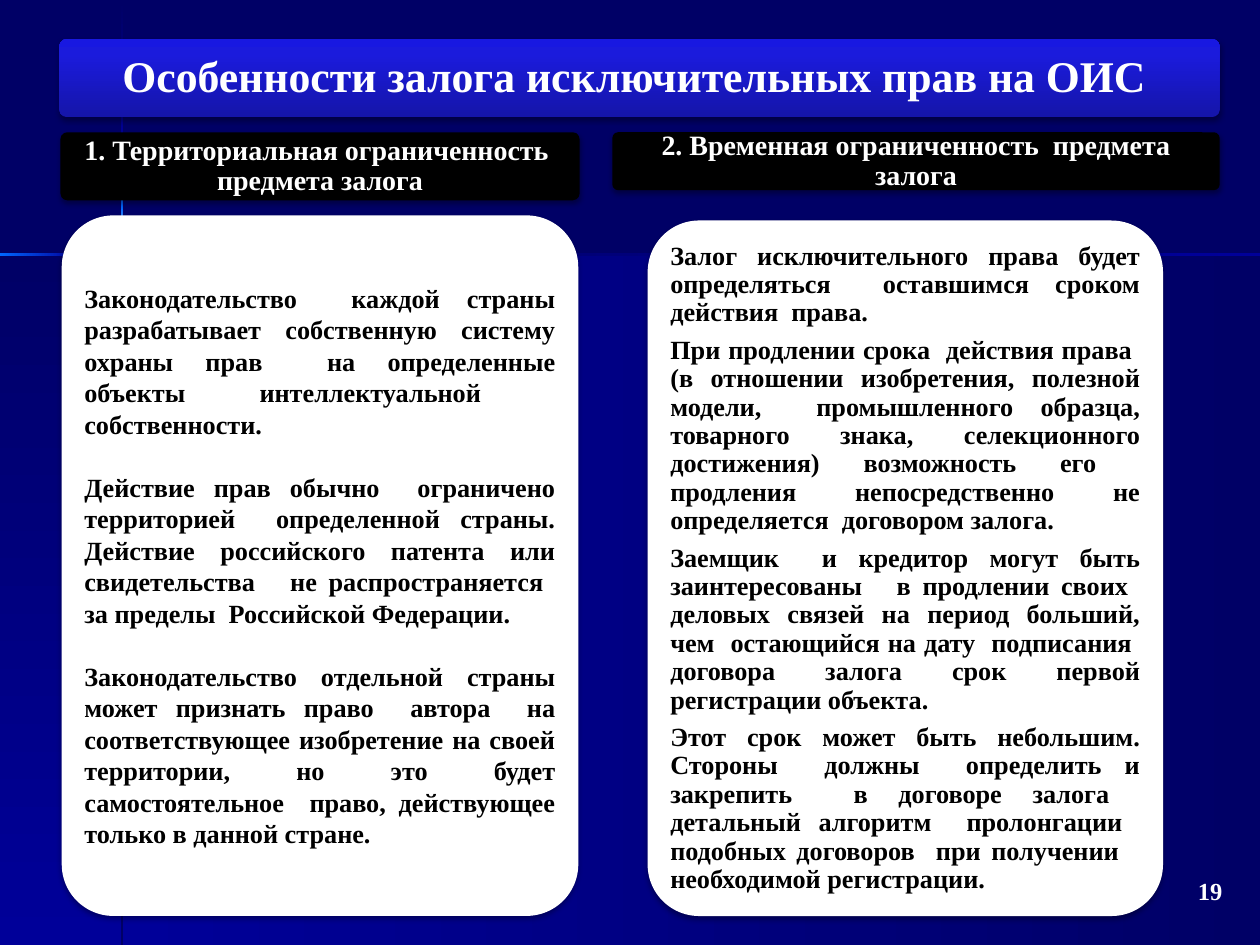
from copy import deepcopy
from dataclasses import dataclass

from lxml.etree import SubElement
from pptx import Presentation
from pptx.dml.color import RGBColor
from pptx.enum.shapes import MSO_SHAPE
from pptx.enum.text import MSO_ANCHOR, MSO_AUTO_SIZE, PP_ALIGN
from pptx.oxml.ns import qn
from pptx.util import Inches, Pt


@dataclass(frozen=True)
class Theme:
    font: str = "Times New Roman"
    navy: str = "000066"
    blue: str = "000099"
    glow: str = "0066FF"
    spark: str = "FFFFCC"
    white: str = "FFFFFF"
    black: str = "000000"
    banner: tuple = ((0, "1515A9"), (80, "1B1BDC"), (100, "1818E1"))
    title_size: int = 25
    heading_size: int = 16
    body_size: int = 15
    number_size: int = 14
    tight: float = 0.9


THEME = Theme()

TITLE = "Особенности залога исключительных прав на ОИС "
TERRITORY_HEADING = "1. Территориальная ограниченность  предмета залога"
TERRITORY = [
    "Законодательство  каждой страны разрабатывает собственную систему охраны "
    "прав  на определенные объекты интеллектуальной  собственности.",
    "Действие прав обычно  ограничено территорией  определенной страны. "
    "Действие российского патента или свидетельства   не распространяется  "
    "за пределы  Российской Федерации. ",
    "Законодательство отдельной страны может признать право  автора  на "
    "соответствующее изобретение на своей территории, но это будет "
    "самостоятельное  право, действующее только в данной стране.",
]
TIME_HEADING = "2. Временная ограниченность  предмета залога"
TIME = [
    "Залог исключительного права будет определяться  оставшимся сроком "
    "действия  права. ",
    "При продлении срока  действия права  (в отношении изобретения, полезной "
    "модели,  промышленного образца, товарного знака, селекционного "
    "достижения) возможность его  продления непосредственно не определяется  "
    "договором залога.",
    "Заемщик  и кредитор могут быть заинтересованы   в продлении своих  "
    "деловых связей на период больший, чем  остающийся на дату  подписания  "
    "договора залога срок первой регистрации объекта. ",
    "Этот срок может быть небольшим. Стороны  должны  определить и закрепить  "
    "в договоре залога  детальный алгоритм  пролонгации  подобных договоров  "
    "при получении   необходимой регистрации.",
]


def fill_gradient(shape, stops, angle):
    """Apply (percent, colour) stops; the angle runs clockwise in degrees."""
    shape.fill.gradient()
    shape.fill.gradient_angle = (360 - angle) % 360
    stop_list = shape.element.spPr.find(".//" + qn("a:gsLst"))
    while len(stop_list) < len(stops):
        stop_list.append(deepcopy(stop_list[0]))
    for stop, (percent, colour) in zip(shape.fill.gradient_stops, stops):
        stop.position = percent / 100
        stop.color.rgb = RGBColor.from_string(colour)


def add_soft_shadow(shape):
    shape.shadow.inherit = False
    effects = shape.element.spPr.find(qn("a:effectLst"))
    shadow = SubElement(effects, qn("a:outerShdw"), blurRad=str(Pt(3.1)),
                        dist=str(Pt(1.8)), dir="5400000", rotWithShape="0")
    colour = SubElement(shadow, qn("a:srgbClr"), val=THEME.black)
    SubElement(colour, qn("a:alpha"), val="35000")


def add_backdrop(slide):
    fade = ((0, THEME.navy), (100, THEME.blue))
    fade_out = ((0, THEME.blue), (100, THEME.navy))
    shine = ((0, THEME.blue), (100, THEME.glow))
    flash = ((0, THEME.glow), (50, THEME.spark), (100, THEME.glow))
    areas = [
        (0.97, 2.02, 9.03, 5.48, fade, 180),
        (0, 2.02, 0.97, 5.48, fade, 90),
        (0.96, 0, 0.02, 1.21, fade, 90),
        (0.96, 2.82, 0.02, 4.68, fade_out, 90),
        (1.77, 2.01, 8.23, 0.02, fade_out, 180),
        (0.96, 1.21, 0.02, 0.44, shine, 90),
        (0.96, 1.65, 0.02, 0.73, flash, 90),
        (0, 2.01, 0.61, 0.02, shine, 180),
    ]
    slide.background.fill.solid()
    slide.background.fill.fore_color.rgb = RGBColor.from_string(THEME.navy)
    for *box, stops, angle in areas:
        area = slide.shapes.add_shape(MSO_SHAPE.RECTANGLE, *map(Inches, box))
        fill_gradient(area, stops, angle)
        area.line.fill.background()
        area.shadow.inherit = False


def add_panel(slide, box, colour=None):
    panel = slide.shapes.add_shape(MSO_SHAPE.ROUNDED_RECTANGLE, *map(Inches, box))
    panel.adjustments[0] = 0.1
    if colour:
        panel.fill.solid()
        panel.fill.fore_color.rgb = RGBColor.from_string(colour)
    panel.line.fill.background()
    add_soft_shadow(panel)
    return panel


def write(frame, texts, size, colour, align, margin, spacing=1.0, gap=0):
    """Fill a text frame with bold paragraphs set `gap` points apart."""
    frame.word_wrap = True
    frame.auto_size = MSO_AUTO_SIZE.NONE
    frame.vertical_anchor = MSO_ANCHOR.MIDDLE
    frame.margin_left = frame.margin_right = Inches(margin)
    frame.margin_top = frame.margin_bottom = Inches(margin)
    for index, text in enumerate(texts):
        paragraph = frame.add_paragraph() if index else frame.paragraphs[0]
        paragraph.text = text
        paragraph.alignment = align
        paragraph.line_spacing = spacing
        paragraph.space_before = Pt(0)
        paragraph.space_after = Pt(gap if index < len(texts) - 1 else 0)
        paragraph.font.name = THEME.font
        paragraph.font.size = Pt(size)
        paragraph.font.bold = True
        paragraph.font.color.rgb = RGBColor.from_string(colour)


def add_title(slide):
    banner = add_panel(slide, (0.47, 0.31, 9.21, 0.62))
    fill_gradient(banner, THEME.banner, 270)
    title = slide.shapes.title
    title.left, title.top = Inches(0.49), Inches(0.33)
    title.width, title.height = Inches(9.17), Inches(0.59)
    write(title.text_frame, [TITLE], THEME.title_size, THEME.white,
          PP_ALIGN.CENTER, 0.1, THEME.tight)
    # The title has to lie in front of its banner.
    title.element.getparent().append(title.element)


def add_column(slide, heading, heading_box, texts, card_box, spacing, gap):
    header = add_panel(slide, heading_box, THEME.black)
    write(header.text_frame, [heading], THEME.heading_size, THEME.white,
          PP_ALIGN.CENTER, 0.07, THEME.tight)
    card = add_panel(slide, card_box, THEME.white)
    write(card.text_frame, texts, THEME.body_size, THEME.black,
          PP_ALIGN.JUSTIFY, 0.06, spacing, gap)


def add_page_number(slide, number):
    corner = slide.shapes.add_textbox(Inches(7.36), Inches(6.9),
                                      Inches(2.44), Inches(0.49))
    write(corner.text_frame, [number], THEME.number_size, THEME.white,
          PP_ALIGN.RIGHT, 0.1)
    corner.text_frame.vertical_anchor = MSO_ANCHOR.TOP
    corner.text_frame.margin_top = Inches(0.05)


def main():
    deck = Presentation()
    deck.slide_width, deck.slide_height = Inches(10), Inches(7.5)
    slide = deck.slides.add_slide(deck.slide_layouts[5])
    add_backdrop(slide)
    add_title(slide)
    add_column(slide, TERRITORY_HEADING, (0.48, 1.05, 4.12, 0.54),
               TERRITORY, (0.49, 1.71, 4.1, 5.56), 1.0, 18)
    add_column(slide, TIME_HEADING, (4.86, 1.05, 4.82, 0.46),
               TIME, (5.14, 1.75, 4.09, 5.52), THEME.tight,
               0.35 * THEME.body_size)
    add_page_number(slide, "19")
    deck.save("out.pptx")


if __name__ == "__main__":
    main()
